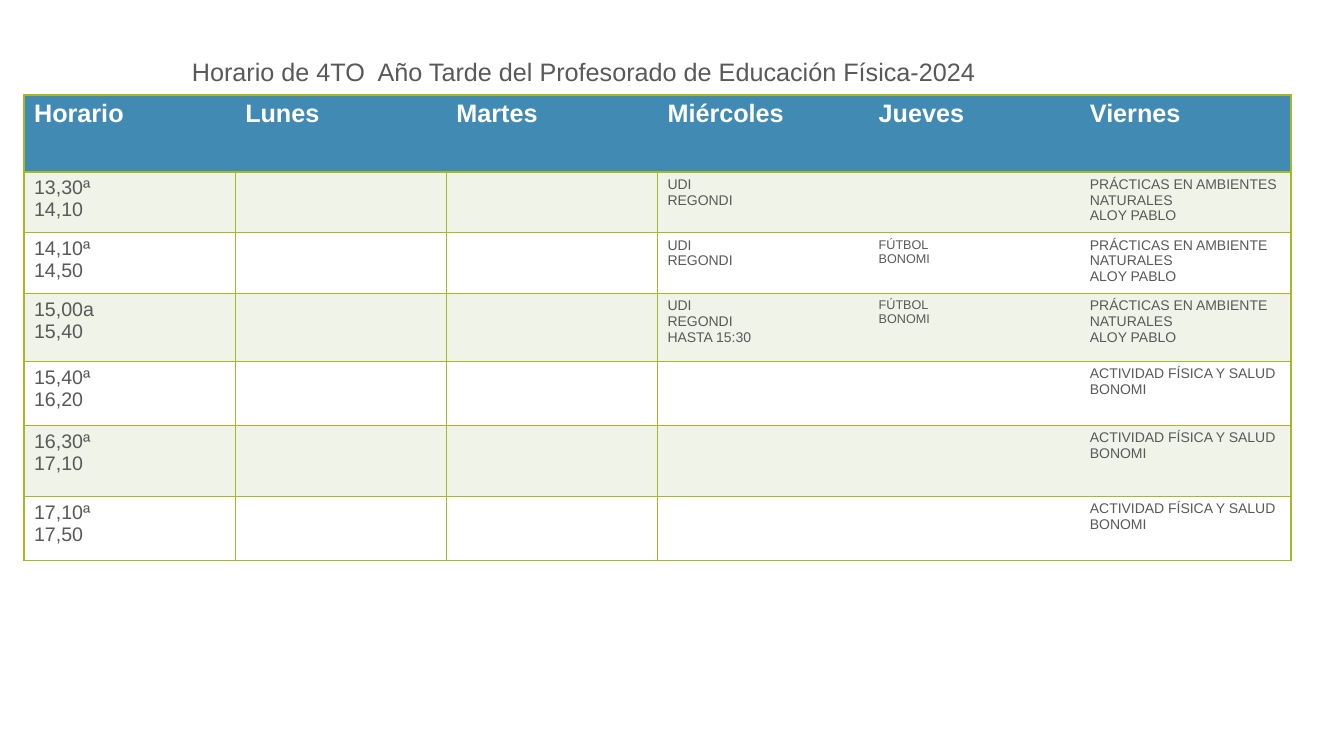
from dataclasses import dataclass

from lxml import etree
from pptx import Presentation
from pptx import util as u
from pptx.dml.color import RGBColor
from pptx.enum import text
from pptx.oxml.ns import qn

PX = 914400 / 100.8
NO_GRID_STYLE = "{2D5ABB26-0587-4C30-8999-92F81FD0307C}"


@dataclass(frozen=True)
class Theme:
    """Colours, font and type sizes of the timetable."""
    font: str = "Arial"
    ink: str = "595959"
    white: str = "FFFFFF"
    header: str = "418AB3"
    band: str = "F0F3E7"
    rule: str = "A6B727"
    title: int = 18
    hour: int = 14
    subject: int = 10
    small: int = 9


THEME = Theme()
TITLE = "Horario de 4TO  Año Tarde del Profesorado de Educación Física-2024"
DAYS = ["Horario", "Lunes", "Martes", "Miércoles", "Jueves", "Viernes"]
UDI = "UDI\nREGONDI"
FOOTBALL = "FÚTBOL\nBONOMI"
OUTDOORS = "PRÁCTICAS EN AMBIENTE NATURALES\nALOY PABLO"
HEALTH = "ACTIVIDAD FÍSICA Y SALUD\nBONOMI"
LESSONS = [
    ["13,30ª\n14,10", "", "", UDI, "", OUTDOORS.replace("AMBIENTE", "AMBIENTES")],
    ["14,10ª\n14,50", "", "", UDI, FOOTBALL, OUTDOORS],
    ["15,00a\n15,40", "", "", UDI + "\nHASTA 15:30", FOOTBALL, OUTDOORS],
    ["15,40ª\n16,20", "", "", "", "", HEALTH],
    ["16,30ª\n17,10", "", "", "", "", HEALTH],
    ["17,10ª\n17,50", "", "", "", "", HEALTH],
]
ROW_HEIGHTS = [77, 57, 57, 68, 64, 71, 64]
COLUMN_SIZES = [THEME.hour] + [THEME.subject] * 3 + [THEME.small, THEME.subject]


def px(n):
    """Turn pixels into EMU."""
    return u.Emu(round(n * PX))


def write(tf, words, size, color, bold=False):
    """Fill a text frame, one paragraph per line of words."""
    for i, line in enumerate(words.split("\n")):
        p = tf.paragraphs[0] if i == 0 else tf.add_paragraph()
        r = p.add_run()
        r.text = line
        for name, value in {"name": THEME.font, "size": u.Pt(size), "bold": bold}.items():
            setattr(r.font, name, value)
        r.font.color.rgb = RGBColor.from_string(color)


def add_borders(cell, sides):
    """Draw a thin rule on the given sides of a cell."""
    tc_pr = cell._tc.get_or_add_tcPr()
    for side in "LRTB":
        if side in sides:
            ln = etree.SubElement(tc_pr, qn(f"a:ln{side}"), w=str(u.Pt(1)))
            fill = etree.SubElement(ln, qn("a:solidFill"))
            etree.SubElement(fill, qn("a:srgbClr"), val=THEME.rule)


def cell_sides(row, col):
    """Name the ruled sides of the cell at a row and column."""
    sides = "TB"
    if col == 0 or (row and col <= 2):
        sides += "L"
    if col == len(DAYS) - 1 or (row and col <= 1):
        sides += "R"
    return sides


def add_title(slide, x, y, w, h):
    """Place the heading at the bottom of its box."""
    tf = slide.shapes.add_textbox(px(x), px(y), px(w), px(h)).text_frame
    layout = {"word_wrap": True, "vertical_anchor": text.MSO_ANCHOR.BOTTOM,
              "margin_bottom": px(48)}
    for name, value in layout.items():
        setattr(tf, name, value)
    write(tf, TITLE, THEME.title, THEME.ink)
    tf.paragraphs[0].line_spacing = 0.9


def add_timetable(slide, x, y, w):
    """Place the weekly timetable with equal columns."""
    rows = [DAYS] + LESSONS
    frame = slide.shapes.add_table(len(rows), len(DAYS), px(x), px(y), px(w),
                                   px(sum(ROW_HEIGHTS)))
    table = frame.table
    table.first_row = table.horz_banding = False
    table._tbl.tblPr.find(qn("a:tableStyleId")).text = NO_GRID_STYLE
    for column in table.columns:
        column.width = px(w / len(DAYS))
    for i, (words, height) in enumerate(zip(rows, ROW_HEIGHTS)):
        table.rows[i].height = px(height)
        fill = THEME.header if i == 0 else THEME.band if i % 2 else THEME.white
        for j, word in enumerate(words):
            cell = table.cell(i, j)
            add_borders(cell, cell_sides(i, j))
            cell.fill.solid()
            cell.fill.fore_color.rgb = RGBColor.from_string(fill)
            if word and i == 0:
                write(cell.text_frame, word, THEME.title, THEME.white, True)
            elif word:
                write(cell.text_frame, word, COLUMN_SIZES[j], THEME.ink)


def main():
    """Build and save the timetable slide."""
    prs = Presentation()
    prs.slide_width, prs.slide_height = px(1344), px(756)
    slide = prs.slides.add_slide(prs.slide_layouts[6])
    add_title(slide, 182, -16, 1033, 151)
    add_timetable(slide, 24, 95, 1267)
    prs.save("out.pptx")


if __name__ == "__main__":
    main()
